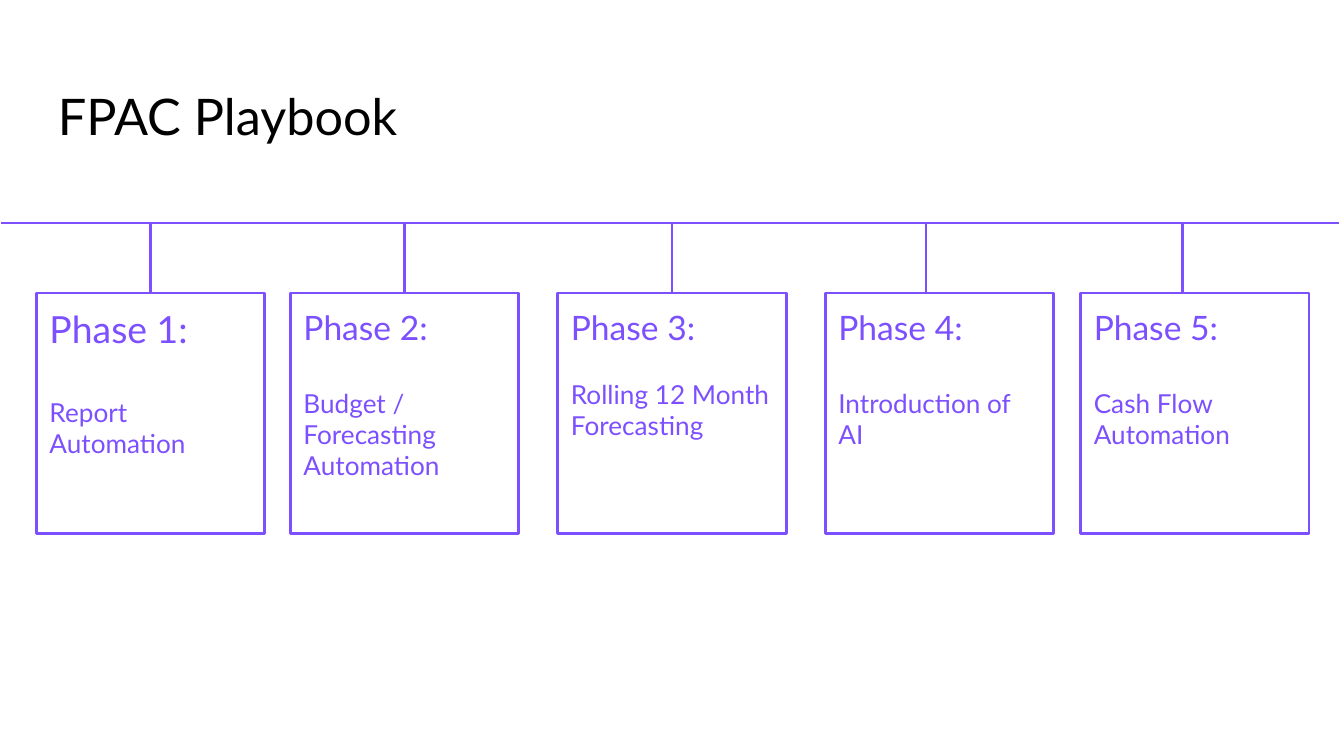
from dataclasses import dataclass

from lxml import etree
from pptx import Presentation
from pptx.dml.color import RGBColor
from pptx.enum.shapes import MSO_CONNECTOR, MSO_SHAPE
from pptx.enum.text import MSO_ANCHOR, MSO_AUTO_SIZE, PP_ALIGN
from pptx.oxml.ns import qn
from pptx.util import Pt

SCALE = 4572
RECT = MSO_SHAPE.RECTANGLE
STRAIGHT = MSO_CONNECTOR.STRAIGHT
TOP = MSO_ANCHOR.TOP
FIXED = MSO_AUTO_SIZE.NONE
LEFT = PP_ALIGN.LEFT

PURPLE = "7C4FFF"
BLACK = "000000"
FONT = "Lato"
LINE_RATE = 1.2
BODY_SIZE = 14

RAIL_Y = 332
BOX_Y, BOX_W, BOX_H = 436, 340, 358


@dataclass
class Phase:
    left: int
    stem: int
    head: str
    body: str
    size: int = 18
    gap: int = 18


PHASES = [
    Phase(54, 224, "Phase 1:", "Report Automation", 20, 20),
    Phase(432, 602, "Phase 2:", "Budget / Forecasting Automation"),
    Phase(830, 1000, "Phase 3:", "Rolling 12 Month Forecasting", gap=14),
    Phase(1228, 1378, "Phase 4:", "Introduction of AI"),
    Phase(1608, 1760, "Phase 5:", "Cash Flow Automation"),
]


def px(count: int) -> int:
    return count * SCALE


def tint(code: str) -> RGBColor:
    return RGBColor.from_string(code)


def apply(target, values: dict) -> None:
    for key, value in values.items():
        setattr(target, key, value)


def set_frame(frame) -> None:
    apply(frame, {
        "word_wrap": True, "auto_size": FIXED, "vertical_anchor": TOP,
        "margin_left": px(20), "margin_right": px(20),
        "margin_top": px(20), "margin_bottom": px(20),
    })


def write(para, text: str, size: int, code: str, gap: float = 0) -> None:
    para.text = text
    apply(para, {"alignment": LEFT, "space_before": Pt(gap)})
    apply(para.font, {"name": FONT, "size": Pt(size), "bold": False})
    para.font.color.rgb = tint(code)


def set_line(line) -> None:
    line.color.rgb = tint(PURPLE)
    line.width = Pt(1.5)


def draw_line(slide, x1: int, y1: int, x2: int, y2: int):
    link = slide.shapes.add_connector(STRAIGHT, px(x1), px(y1), px(x2), px(y2))
    set_line(link.line)
    etree.SubElement(link._element.spPr, qn("a:effectLst"))
    return link


def draw_phase(slide, phase: Phase) -> None:
    box = slide.shapes.add_shape(RECT, px(phase.left), px(BOX_Y), px(BOX_W), px(BOX_H))
    box.shadow.inherit = False
    box.fill.background()
    set_line(box.line)
    frame = box.text_frame
    set_frame(frame)
    write(frame.paragraphs[0], phase.head, phase.size, PURPLE)
    write(frame.add_paragraph(), phase.body, BODY_SIZE, PURPLE, round(phase.gap * LINE_RATE, 1))
    stem = draw_line(slide, phase.stem, BOX_Y, phase.stem, RAIL_Y)
    if phase.stem == phase.left + BOX_W // 2:
        stem.begin_connect(box, 0)


def draw_title(slide, text: str) -> None:
    title = slide.shapes.title
    apply(title, {"left": px(66), "top": px(106), "width": px(1864), "height": px(126)})
    set_frame(title.text_frame)
    write(title.text_frame.paragraphs[0], text, 27, BLACK)


def main() -> None:
    deck = Presentation()
    apply(deck, {"slide_width": px(2000), "slide_height": px(1125)})
    slide = deck.slides.add_slide(deck.slide_layouts[5])
    draw_title(slide, "FPAC Playbook")
    draw_line(slide, 2, RAIL_Y, 1992, RAIL_Y)
    for phase in PHASES:
        draw_phase(slide, phase)
    deck.save("out.pptx")


if __name__ == "__main__":
    main()
